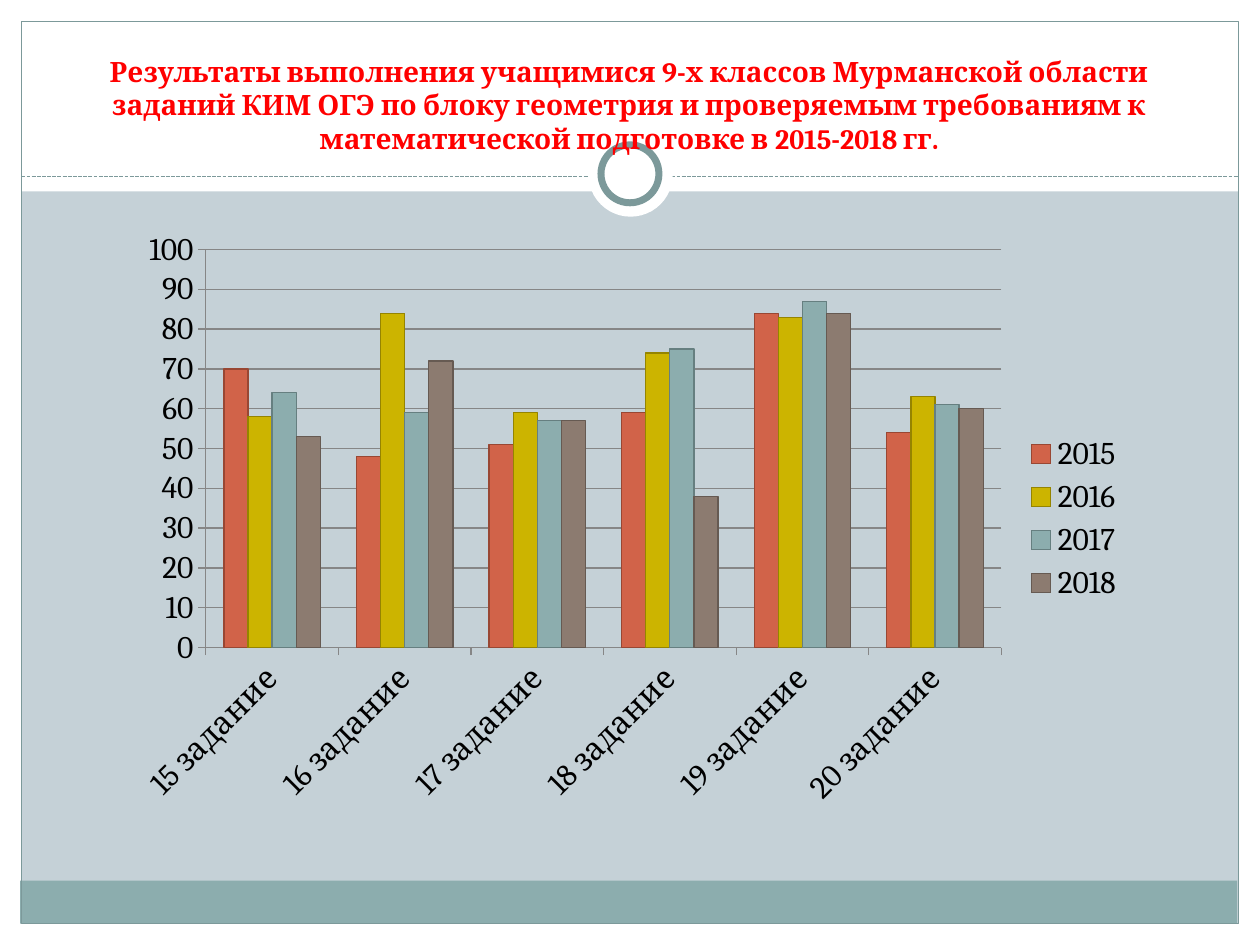
from lxml import etree
from pptx import Presentation
from pptx.chart.data import CategoryChartData
from pptx.dml.color import RGBColor
from pptx.enum.chart import XL_CHART_TYPE as ChartType, XL_LEGEND_POSITION as LegendPosition
from pptx.enum.chart import XL_TICK_MARK as TickMark
from pptx.enum.dml import MSO_LINE as LineStyle
from pptx.enum.shapes import MSO_CONNECTOR as Connector, MSO_SHAPE as Shape
from pptx.enum.text import MSO_ANCHOR as Anchor, PP_ALIGN as Align
from pptx.oxml.ns import qn
from pptx.util import Inches, Pt

FONT = "Cambria"
WHITE, TEAL, FRAME, GRID = "FFFFFF", "8CADAE", "7C999A", "868686"
TITLE = ("Результаты выполнения учащимися 9-х классов Мурманской области "
         "заданий КИМ ОГЭ по блоку геометрия и проверяемым требованиям к "
         "математической подготовке в 2015-2018 гг.")
TASKS = [f"{number} задание" for number in range(15, 21)]
# Year, results by task, fill, outline
RESULTS = [
    ("2015", (70, 48, 51, 59, 84, 54), "D16349", "994733"),
    ("2016", (58, 84, 59, 74, 83, 63), "CCB400", "958400"),
    ("2017", (64, 59, 57, 75, 87, 61), TEAL, "667F80"),
    ("2018", (53, 72, 57, 38, 84, 60), "8C7B70", "665A52"),
]


def color(hex_code):
    return RGBColor.from_string(hex_code)


def set_line(line, hex_code, width):
    line.color.rgb = color(hex_code)
    line.width = Pt(width)


def add_shape(slide, kind, box, fill=None, line=None, width=0.75):
    shape = slide.shapes.add_shape(kind, *map(Inches, box))
    shape.shadow.inherit = False
    if fill:
        shape.fill.solid()
        shape.fill.fore_color.rgb = color(fill)
    else:
        shape.fill.background()
    if line:
        set_line(shape.line, line, width)
    else:
        shape.line.fill.background()


def add_dashed_line(slide, left, right, top):
    connector = slide.shapes.add_connector(
        Connector.STRAIGHT, Inches(left), Inches(top), Inches(right), Inches(top))
    set_line(connector.line, FRAME, 0.75)
    connector.line.dash_style = LineStyle.SQUARE_DOT
    properties = connector._element.spPr
    properties.find(qn("a:ln")).find(qn("a:prstDash")).set("val", "sysDash")
    etree.SubElement(properties, qn("a:effectLst"))


def add_title(slide, text, box):
    text_frame = slide.shapes.add_textbox(*map(Inches, box)).text_frame
    text_frame.word_wrap = True
    text_frame.vertical_anchor = Anchor.BOTTOM
    text_frame.margin_bottom = Inches(0.32)
    text_frame.text = text
    paragraph = text_frame.paragraphs[0]
    paragraph.alignment = Align.CENTER
    font = paragraph.runs[0].font
    font.name, font.size, font.bold = FONT, Pt(16), True
    font.color.rgb = color("FF0000")


def style_font(font):
    font.name, font.size = FONT, Pt(18)
    font.color.rgb = color("000000")


def add_results_chart(slide, box):
    data = CategoryChartData()
    data.categories = TASKS
    for year, values, _, _ in RESULTS:
        data.add_series(year, values)
    chart = slide.shapes.add_chart(
        ChartType.COLUMN_CLUSTERED, *map(Inches, box), data).chart
    style_font(chart.font)
    chart.has_title = False

    # Columns
    plot = chart.plots[0]
    plot.vary_by_categories = False
    plot.gap_width, plot.overlap = 150, 0
    for series, (_, _, fill, outline) in zip(plot.series, RESULTS):
        series.format.fill.solid()
        series.format.fill.fore_color.rgb = color(fill)
        set_line(series.format.line, outline, 0.75)

    # Axes, with slanted task names
    for axis in (chart.category_axis, chart.value_axis):
        axis.major_tick_mark = TickMark.OUTSIDE
        axis.minor_tick_mark = TickMark.NONE
        set_line(axis.format.line, GRID, 0.75)
        style_font(axis.tick_labels.font)
    body = chart.category_axis._element.find(qn("c:txPr")).find(qn("a:bodyPr"))
    body.set("rot", "-2700000")
    body.set("vert", "horz")
    value_axis = chart.value_axis
    value_axis.minimum_scale, value_axis.maximum_scale = 0, 100
    value_axis.major_unit = 10
    value_axis.has_major_gridlines = True
    set_line(value_axis.major_gridlines.format.line, GRID, 0.75)

    # Legend
    chart.has_legend = True
    chart.legend.position = LegendPosition.RIGHT
    chart.legend.include_in_layout = False
    style_font(chart.legend.font)


def main():
    presentation = Presentation()
    presentation.slide_width, presentation.slide_height = Inches(10), Inches(7.5)
    slide = presentation.slides.add_slide(presentation.slide_layouts[6])
    slide.background.fill.solid()
    slide.background.fill.fore_color.rgb = color("C5D1D7")

    # White margins and header
    for box in ((0, 7.33, 10, 0.17), (0, 0, 10, 1.52),
                (0, 0, 0.17, 7.5), (9.83, 0, 0.17, 7.5)):
        add_shape(slide, Shape.RECTANGLE, box, WHITE)

    # Footer band, frame and divider with ring
    add_shape(slide, Shape.RECTANGLE, (0.16, 6.99, 9.66, 0.34), TEAL)
    add_shape(slide, Shape.RECTANGLE, (0.17, 0.17, 9.66, 7.16), line=FRAME)
    add_dashed_line(slide, 0.17, 9.83, 1.4)
    add_shape(slide, Shape.OVAL, (4.67, 1.05, 0.67, 0.67), WHITE)
    add_shape(slide, Shape.OVAL, (4.77, 1.15, 0.46, 0.46), WHITE, FRAME, 4)

    # Content
    add_title(slide, TITLE, (0.33, 0.25, 9.33, 1.3))
    add_results_chart(slide, (0.97, 1.74, 8.05, 4.75))
    presentation.save("out.pptx")


if __name__ == "__main__":
    main()
